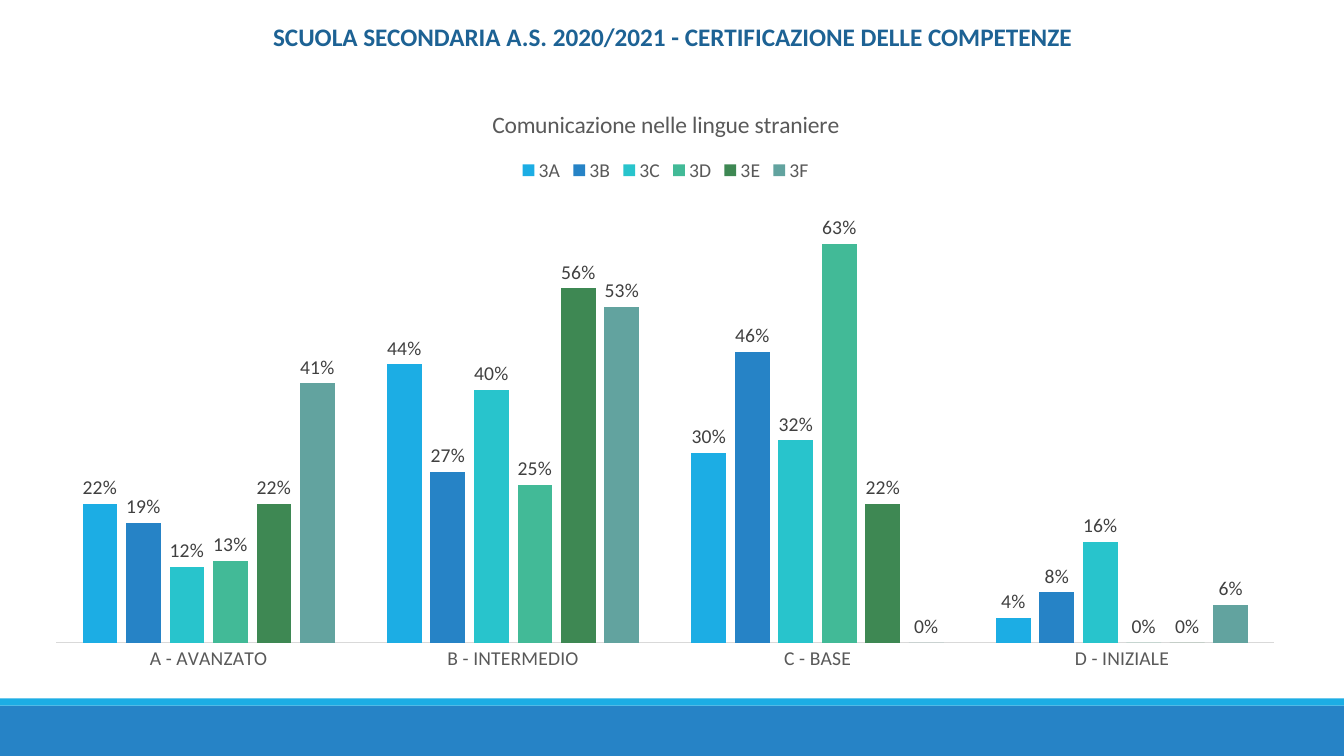
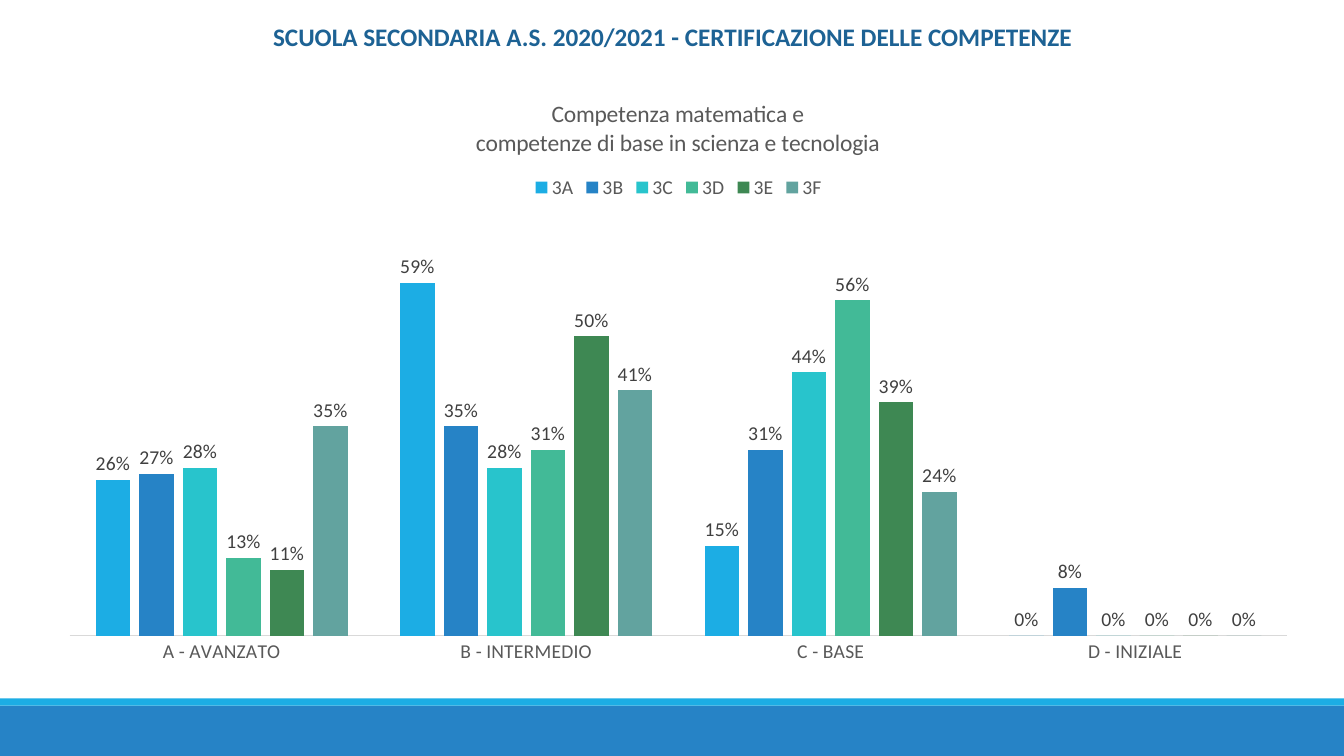
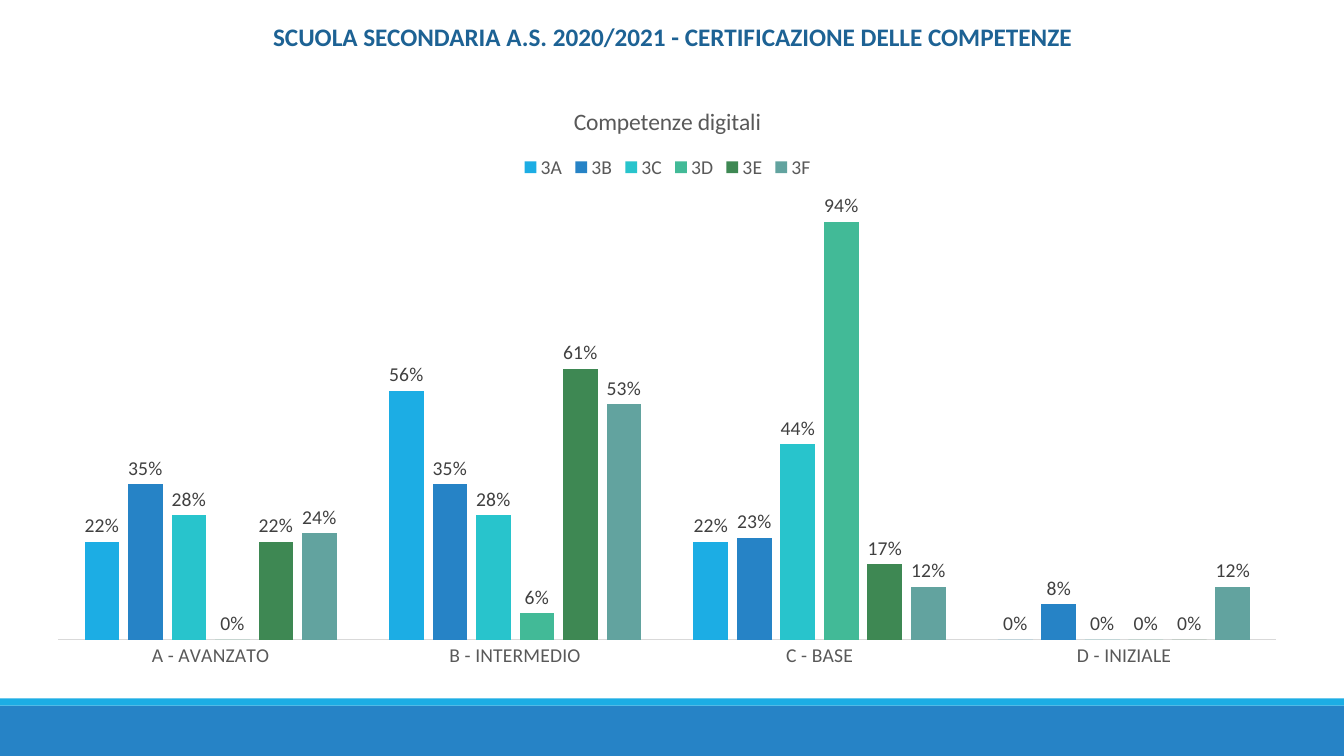
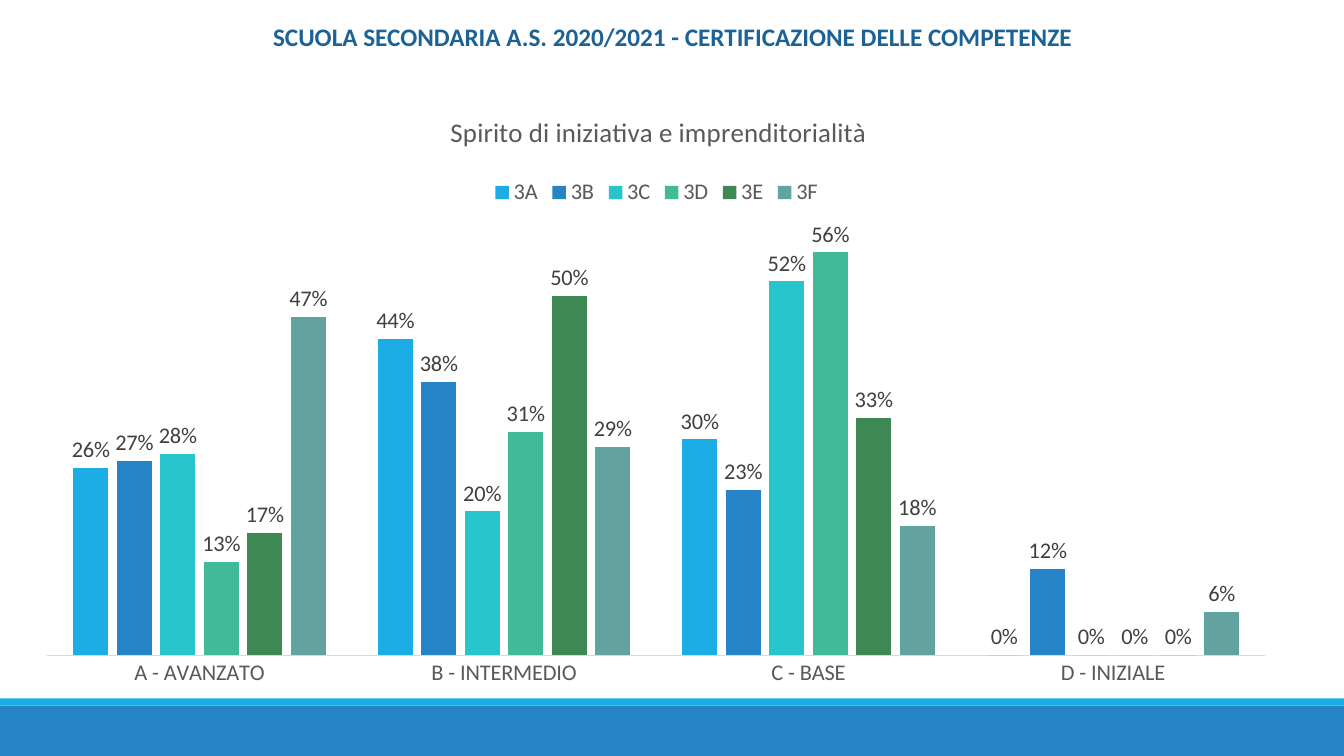
from dataclasses import dataclass

from lxml import etree
from pptx import Presentation
from pptx.chart.data import CategoryChartData
from pptx.dml.color import RGBColor
from pptx.enum.chart import XL_CHART_TYPE, XL_LABEL_POSITION, XL_LEGEND_POSITION, XL_TICK_MARK
from pptx.enum.shapes import MSO_SHAPE
from pptx.oxml.ns import qn
from pptx.util import Inches, Pt

COLUMNS = XL_CHART_TYPE.COLUMN_CLUSTERED
OUTSIDE_END = XL_LABEL_POSITION.OUTSIDE_END
LEGEND_TOP = XL_LEGEND_POSITION.TOP
NO_TICKS = XL_TICK_MARK.NONE
RECTANGLE = MSO_SHAPE.RECTANGLE

PAGE_WIDTH, PAGE_HEIGHT = 13.33, 7.5
CHART_WIDTH, CHART_HEIGHT = 12.6, 5.91
PLOT_LEFT, PLOT_BOTTOM = 0.26, 5.5
FONT = "Calibri"
HEADING = "SCUOLA SECONDARIA A.S. 2020/2021 - CERTIFICAZIONE DELLE COMPETENZE"
HEADING_COLOR, TEXT_COLOR, LABEL_COLOR, AXIS_COLOR = "1D6294", "595959", "404040", "D9D9D9"
BANDS = [(7, 0.5, "2683C6"), (6.93, 0.07, "1CADE4")]
LEVELS = ["A - AVANZATO", "B - INTERMEDIO", "C - BASE", "D - INIZIALE"]
CLASS_COLORS = {
    "3A": "1CADE4",
    "3B": "2683C6",
    "3C": "28C4CC",
    "3D": "42BA97",
    "3E": "3E8853",
    "3F": "62A39F",
}


@dataclass
class Competence:
    title: str
    corner: tuple
    title_at: tuple
    legend_at: tuple
    plot_top: float
    maximum: float
    percentages: list
    size: int = 14


COMPETENCES = [
    Competence(
        "Comunicazione nelle lingue straniere",
        (0.3, 0.88), (4.54, 0.16), (4.82, 0.65), 1.1, 0.7,
        [(22, 44, 30, 4), (19, 27, 46, 8), (12, 40, 32, 16),
         (13, 25, 63, 0), (22, 56, 22, 0), (41, 53, 0, 6)],
    ),
    Competence(
        "Competenza matematica e\ncompetenze di base in scienza e tecnologia",
        (0.43, 0.81), (4.26, 0.14), (4.82, 0.89), 1.34, 0.7,
        [(26, 59, 15, 0), (27, 35, 31, 8), (28, 28, 44, 0),
         (13, 31, 56, 0), (11, 50, 39, 0), (35, 41, 24, 0)],
    ),
    Competence(
        "Competenze digitali",
        (0.32, 0.85), (5.33, 0.16), (4.82, 0.65), 1.09, 1,
        [(22, 56, 22, 0), (35, 35, 23, 8), (28, 28, 44, 0),
         (0, 6, 94, 0), (22, 61, 17, 0), (24, 53, 12, 12)],
    ),
    Competence(
        "Spirito di iniziativa e imprenditorialità",
        (0.21, 1), (4.21, 0.07), (4.63, 0.73), 1.22, 0.6,
        [(26, 44, 30, 0), (27, 38, 23, 12), (28, 20, 52, 0),
         (13, 31, 56, 0), (17, 50, 33, 0), (47, 29, 18, 6)],
        16,
    ),
]


def color(value):
    return RGBColor.from_string(value)


def style_font(font, size, value, bold=False):
    font.name = FONT
    font.size = Pt(size)
    font.bold = bold
    font.color.rgb = color(value)


def add_bands(page):
    for top, height, fill in BANDS:
        band = page.shapes.add_shape(
            RECTANGLE, 0, Inches(top), Inches(PAGE_WIDTH), Inches(height))
        band.shadow.inherit = False
        band.fill.solid()
        band.fill.fore_color.rgb = color(fill)
        band.line.fill.background()


def add_heading(page):
    box = page.shapes.add_textbox(Inches(2.61), Inches(0.16), Inches(8.62), Inches(0.4))
    box.text_frame.word_wrap = True
    para = box.text_frame.paragraphs[0]
    para.text = HEADING
    style_font(para.runs[0].font, 18, HEADING_COLOR, True)


def set_layout(parent, index, left, top, width=None, height=None):
    for old in parent.findall(qn("c:layout")):
        parent.remove(old)
    layout = etree.Element(qn("c:layout"))
    manual = etree.SubElement(layout, qn("c:manualLayout"))
    settings = [("xMode", "edge"), ("yMode", "edge"),
                ("x", left / CHART_WIDTH), ("y", top / CHART_HEIGHT)]
    if width:
        settings.insert(0, ("layoutTarget", "inner"))
        settings += [("w", width / CHART_WIDTH), ("h", height / CHART_HEIGHT)]
    for name, value in settings:
        etree.SubElement(manual, qn("c:" + name)).set("val", str(value))
    parent.insert(index, layout)


def style_axes(chart, competence):
    levels = chart.category_axis
    levels.major_tick_mark = NO_TICKS
    levels.has_major_gridlines = False
    levels.format.line.color.rgb = color(AXIS_COLOR)
    levels.format.line.width = Pt(0.75)
    style_font(levels.tick_labels.font, competence.size, TEXT_COLOR)
    shares = chart.value_axis
    shares.visible = False
    shares.has_major_gridlines = False
    shares.minimum_scale = 0
    shares.maximum_scale = competence.maximum


def style_columns(plot, size):
    plot.gap_width = 150
    plot.overlap = -25
    plot.vary_by_categories = False
    plot.has_data_labels = True
    labels = plot.data_labels
    labels.show_value = True
    labels.number_format = "0%"
    labels.number_format_is_linked = False
    labels.position = OUTSIDE_END
    style_font(labels.font, size, LABEL_COLOR)
    for series in plot.series:
        series.format.fill.solid()
        series.format.fill.fore_color.rgb = color(CLASS_COLORS[series.name])


def add_title_and_legend(chart, competence):
    chart.has_title = True
    title = chart.chart_title
    title.include_in_layout = False
    title.text_frame.text = competence.title
    for para in title.text_frame.paragraphs:
        for span in para.runs:
            style_font(span.font, competence.size * 1.2, TEXT_COLOR)
    chart.has_legend = True
    chart.legend.position = LEGEND_TOP
    chart.legend.include_in_layout = False
    style_font(chart.legend.font, competence.size, TEXT_COLOR)


def add_competence_chart(page, competence):
    data = CategoryChartData(number_format="0%")
    data.categories = LEVELS
    for name, values in zip(CLASS_COLORS, competence.percentages):
        data.add_series(name, [value / 100 for value in values])
    left, top = competence.corner
    chart = page.shapes.add_chart(
        COLUMNS, Inches(left), Inches(top),
        Inches(CHART_WIDTH), Inches(CHART_HEIGHT), data).chart
    style_font(chart.font, competence.size, "000000")
    style_axes(chart, competence)
    style_columns(chart.plots[0], competence.size)
    add_title_and_legend(chart, competence)
    root = chart.element.find(qn("c:chart"))
    set_layout(root.find(qn("c:title")), 1, *competence.title_at)
    set_layout(root.find(qn("c:legend")), 1, *competence.legend_at)
    set_layout(root.find(qn("c:plotArea")), 0, PLOT_LEFT, competence.plot_top,
               CHART_WIDTH - 2 * PLOT_LEFT, PLOT_BOTTOM - competence.plot_top)


def main():
    deck = Presentation()
    deck.slide_width = Inches(PAGE_WIDTH)
    deck.slide_height = Inches(PAGE_HEIGHT)
    for competence in COMPETENCES:
        page = deck.slides.add_slide(deck.slide_layouts[6])
        add_bands(page)
        add_competence_chart(page, competence)
        add_heading(page)
    deck.save("out.pptx")


if __name__ == "__main__":
    main()
